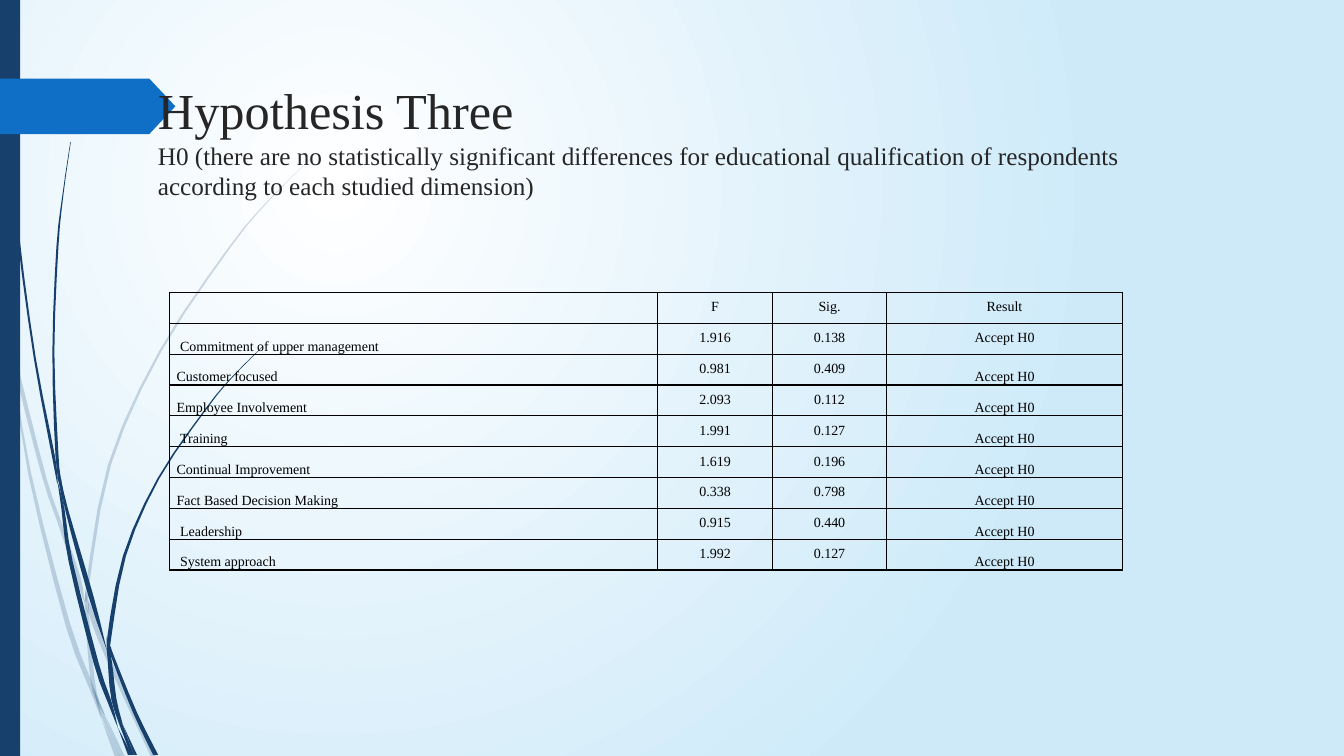
from collections import namedtuple
from dataclasses import dataclass

from lxml import etree
from pptx import Presentation
from pptx.dml.color import RGBColor
from pptx.enum.shapes import MSO_SHAPE
from pptx.enum.text import MSO_ANCHOR, PP_ALIGN
from pptx.oxml.ns import qn
from pptx.util import Cm, Pt

RECT, ARROW = MSO_SHAPE.RECTANGLE, MSO_SHAPE.PENTAGON
TOP, BOTTOM = MSO_ANCHOR.TOP, MSO_ANCHOR.BOTTOM
LEFT, CENTER = PP_ALIGN.LEFT, PP_ALIGN.CENTER

Box = namedtuple("Box", "x y w h")


@dataclass(frozen=True)
class Theme:
    navy: str = "17406D"
    blue: str = "0F6FC6"
    sky: str = "CEEAF9"
    white: str = "FFFFFF"
    ink: str = "262626"
    black: str = "000000"
    font: str = "Times New Roman"
    head: int = 36
    sub: int = 18
    body: int = 10
    rule: int = 1
    pale: int = 20


THEME = Theme()
UNIT = Cm(0.0254)
STEPS = 3

PALE = [
    [(0, 282, 0), (2, 299, 4), (7, 322, 4), (11, 350, 0)],
    [(14, 345, 0), (19, 376, 4), (44, 474, 4), (60, 521, 4), (77.5, 573, 5), (84, 599, 0)],
    [(88, 596, 0), (90.5, 608, 5), (101.5, 639, 5), (125, 693, 4), (152.5, 751, 5)],
    [(105, 711, 0), (121.5, 751, 5)],
    [(11, 350, 0), (29.5, 470, 3), (67.5, 620, 5), (92, 685, 5), (101, 714, 0)],
    [(84, 599, 0), (86.5, 612, 4), (89, 646, 4), (94, 687, 4), (105, 711, 0)],
    [(312, 153.5, 0), (268, 197.5, 1), (228.5, 244.5, 2), (159, 348.5, 2.5),
     (108.5, 461.5, 3), (86.5, 584, 3), (88, 596, 0)],
    [(101, 714, 0), (116.5, 751, 5)],
    [(85, 586, 0), (86, 598, 4), (88, 610, 0)],
    [(93, 683, 0), (101, 707, 4), (119, 751, 0)],
]
DARK = [
    [(3.5, 0, 1), (7.5, 110, 1), (18, 232.5, 2), (34.5, 355, 2), (53.5, 455, 3), (57, 481, 0)],
    [(60, 472, 0), (66, 505, 3), (90.5, 592, 5), (106, 645, 0)],
    [(110, 641, 0), (112, 652, 3), (134, 707, 4), (154.5, 749, 5)],
    [(57, 477, 0), (62.5, 505, 3), (70, 556.5, 4), (95.5, 658, 5), (109, 697, 4), (117, 722, 0)],
    [(70, 141, 0.5), (62.5, 193, 1), (57, 245, 2), (53, 349, 2), (56.5, 450, 3), (60, 472, 0)],
    [(122, 719, 0), (134.5, 749, 3)],
    [(55, 449, 0), (59, 475, 3), (64, 505, 0)],
    [(260.5, 344, 0.5), (231, 373.5, 1), (204.5, 405.5, 1.5), (157, 475, 2),
     (123.5, 551.5, 3), (108.5, 632, 4), (110, 641, 0)],
    [(117, 722, 0), (129, 749, 4)],
    [(106, 645, 0), (109, 656, 4), (113, 693, 5), (122, 719, 0)],
    [(106, 631, 0), (108, 645, 4), (110.5, 656, 0)],
    [(110, 691, 0), (116, 708, 3), (131.5, 749, 3)],
]

HEADS = ["", "F", "Sig.", "Result"]
ROWS = [
    ("Commitment of upper management", "1.916", "0.138"),
    ("Customer focused", "0.981", "0.409"),
    ("Employee Involvement", "2.093", "0.112"),
    ("Training", "1.991", "0.127"),
    ("Continual Improvement", "1.619", "0.196"),
    ("Fact Based Decision Making", "0.338", "0.798"),
    ("Leadership", "0.915", "0.440"),
    ("System approach", "1.992", "0.127"),
]
INSET = {"Commitment of upper management", "Training", "Leadership", "System approach"}
SHARES = [4.84, 1.14, 1.13, 2.34]


def apply(item, values):
    for name, value in values.items():
        setattr(item, name, value)


def add_run(para, text, size, color):
    run = para.add_run()
    run.text = text
    apply(run.font, {"name": THEME.font, "size": Pt(size)})
    run.font.color.rgb = RGBColor.from_string(color)


def paint(shape, color, alpha=100):
    shape.shadow.inherit = False
    shape.fill.solid()
    shape.fill.fore_color.rgb = RGBColor.from_string(color)
    shape.line.fill.background()
    if alpha < 100:
        tint = shape.element.spPr.find(qn("a:solidFill"))[0]
        etree.SubElement(tint, qn("a:alpha"), val=str(alpha * 1000))


def smooth(knots):
    ends = [knots[0], *knots, knots[-1]]
    for a, b, c, d in zip(ends, ends[1:], ends[2:], ends[3:]):
        for step in range(STEPS):
            t = step / STEPS
            yield tuple(
                q + t * (r - p) / 2 + t * t * (p - 2.5 * q + 2 * r - s / 2)
                + t ** 3 * (1.5 * (q - r) + (s - p) / 2)
                for p, q, r, s in zip(a, b, c, d)
            )
    yield knots[-1]


def add_strand(slide, box, knots, alpha):
    curve = list(smooth(knots))
    left = [((x - w / 2) * UNIT, y * UNIT) for x, y, w in curve]
    right = [((x + w / 2) * UNIT, y * UNIT) for x, y, w in reversed(curve)]
    form = slide.shapes.build_freeform(*left[0])
    form.add_line_segments(left[1:] + right)
    paint(form.convert_to_shape(box.x, box.y), THEME.navy, alpha)


def add_back(slide):
    fill = slide.background.fill
    fill.gradient()
    for stop, color in zip(fill.gradient_stops, (THEME.white, THEME.sky)):
        stop.color.rgb = RGBColor.from_string(color)
    grad = slide.element.find(".//" + qn("a:gradFill"))
    grad.remove(grad.find(qn("a:lin")))
    path = etree.SubElement(grad, qn("a:path"), path="circle")
    etree.SubElement(path, qn("a:fillToRect"), l="50000", t="50000", r="100000", b="100000")


def add_decor(slide, box):
    for strands, alpha in ((PALE, THEME.pale), (DARK, 100)):
        for knots in strands:
            add_strand(slide, box, knots, alpha)
    bar = slide.shapes.add_shape(RECT, box.x, box.y, Cm(0.51), box.h)
    paint(bar, THEME.navy)
    tag = slide.shapes.add_shape(ARROW, box.x, box.y + Cm(1.98), Cm(4.42), Cm(1.4))
    tag.adjustments[0] = 0.47
    paint(tag, THEME.blue)


def add_title(slide, box, head, sub):
    frame = slide.shapes.add_textbox(*box).text_frame
    apply(frame, {"word_wrap": True, "vertical_anchor": TOP})
    para = frame.paragraphs[0]
    add_run(para, head, THEME.head, THEME.ink)
    para.add_line_break()
    add_run(para, sub, THEME.sub, THEME.ink)


def add_rules(cell):
    props = cell._tc.get_or_add_tcPr()
    for spot, side in enumerate(("a:lnL", "a:lnR", "a:lnT", "a:lnB")):
        line = etree.Element(qn(side), w=str(Pt(THEME.rule)))
        fill = etree.SubElement(line, qn("a:solidFill"))
        etree.SubElement(fill, qn("a:srgbClr"), val=THEME.black)
        props.insert(spot, line)


def fill_cell(cell, text, row, col):
    label = col == 0
    loose = row > 0 and (label or (col == 3 and row > 1))
    apply(cell, {
        "margin_left": Cm(0.18), "margin_right": Cm(0.18),
        "margin_top": 0, "margin_bottom": 0,
        "vertical_anchor": BOTTOM if loose else TOP,
    })
    cell.fill.background()
    add_rules(cell)
    para = cell.text_frame.paragraphs[0]
    apply(para, {
        "alignment": LEFT if label else CENTER,
        "line_spacing": 1.8 if loose else Pt(16),
    })
    if text in INSET:
        para._p.get_or_add_pPr().set("marL", str(Cm(0.09)))
    if text:
        add_run(para, text, THEME.body, THEME.black)


def add_grid(slide, box):
    lines = [HEADS] + [(*row, "Accept H0") for row in ROWS]
    table = slide.shapes.add_table(len(lines), len(HEADS), *box).table
    apply(table, {"first_row": False, "horz_banding": False})
    for col, share in zip(table.columns, SHARES):
        col.width = int(box.w * share / sum(SHARES))
    for r, line in enumerate(lines):
        table.rows[r].height = box.h // len(lines)
        for c, text in enumerate(line):
            fill_cell(table.cell(r, c), text, r, c)


def main():
    deck = Presentation()
    apply(deck, {"slide_width": Cm(33.87), "slide_height": Cm(19.05)})
    slide = deck.slides.add_slide(deck.slide_layouts[6])
    add_back(slide)
    add_decor(slide, Box(0, 0, deck.slide_width, deck.slide_height))
    add_title(
        slide, Box(Cm(3.73), Cm(1.88), Cm(24.77), Cm(3.56)), "Hypothesis Three",
        "H0 (there are no statistically significant differences for educational "
        "qualification of respondents according to each studied dimension)",
    )
    add_grid(slide, Box(Cm(4.27), Cm(7.37), Cm(24.02), Cm(7)))
    deck.save("out.pptx")


if __name__ == "__main__":
    main()
